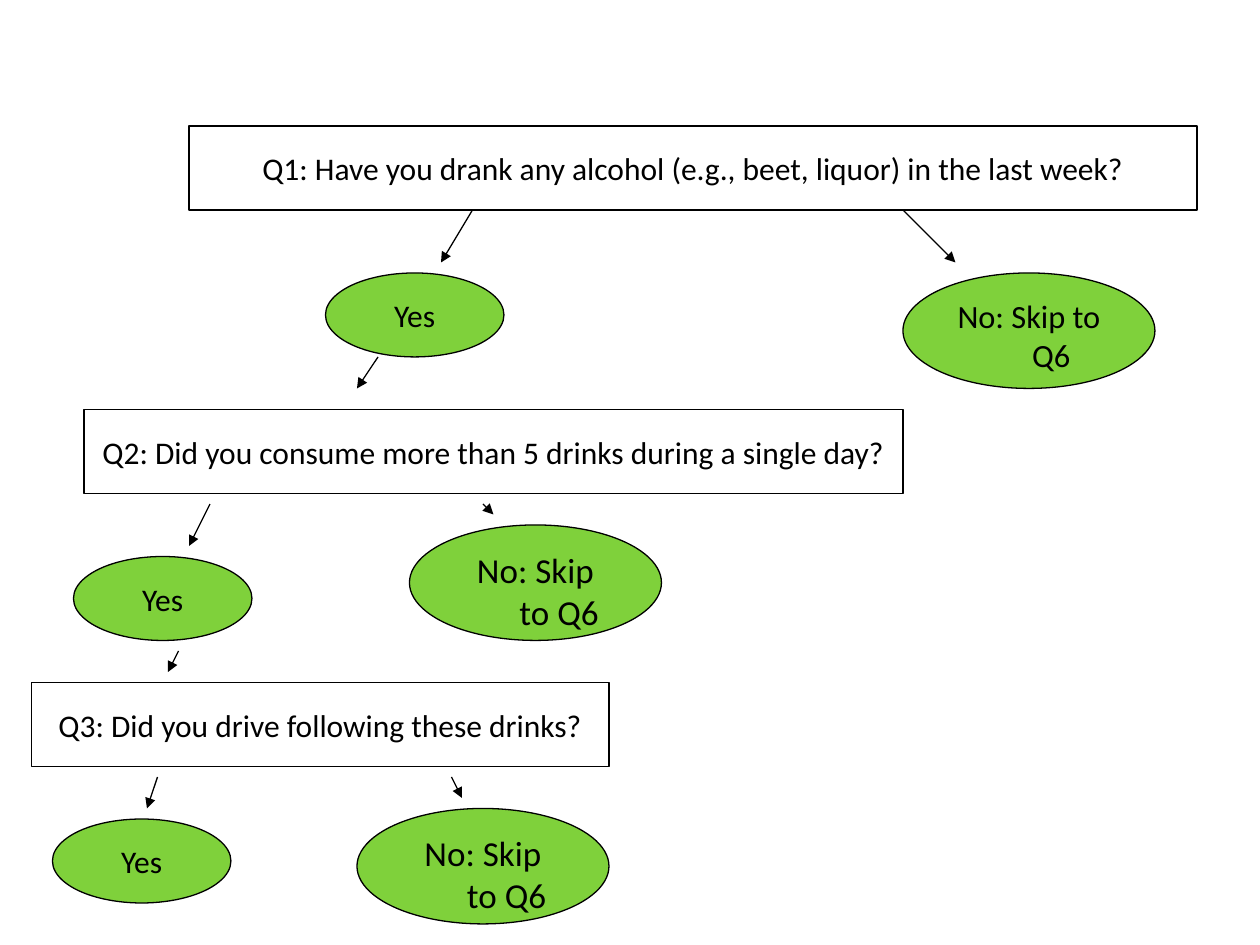
import pptx
import pptx.util
import pptx.dml.color
import pptx.enum.shapes
import pptx.enum.text
import pptx.oxml.ns
import lxml.etree

PX = 9525
COLORS = {"green": "7FD13B", "black": "000000"}
KINDS = pptx.enum.shapes.MSO_SHAPE
ANCHOR = pptx.enum.text.MSO_ANCHOR

ASKS = [
    ("Q1: Have you drank any alcohol (e.g., beet, liquor) in the last week?", 144, 96, 768),
    ("Q2: Did you consume more than 5 drinks during a single day?", 64, 312, 624),
    ("Q3: Did you drive following these drinks?", 24, 520, 440),
]
YESES = [(248, 208), (56, 424), (40, 624)]
SKIPS = [(688, 208, 18.5, 34), (312, 400, 20, 36), (272, 616, 20, 36)]
ARROWS = [
    (360, 160, 336, 200),
    (688, 160, 728, 200),
    (288, 272, 272, 296),
    (160, 384, 144, 416),
    (368, 384, 376, 392),
    (136, 496, 128, 512),
    (120, 592, 112, 616),
    (344, 592, 352, 608),
]


def color(name):
    """Return the named colour."""
    return pptx.dml.color.RGBColor.from_string(COLORS[name])


def ink(line):
    """Give a line the thin black stroke."""
    line.color.rgb = color("black")
    line.width = pptx.util.Pt(0.75)


def add_node(slide, kind, text, box, size=18):
    """Add an outlined shape with centred text."""
    node = slide.shapes.add_shape(kind, *(n * PX for n in box))
    node.shadow.inherit = False
    node.fill.background()
    ink(node.line)
    frame = node.text_frame
    frame.word_wrap = False
    frame.vertical_anchor = ANCHOR.MIDDLE
    para = frame.paragraphs[0]
    para.text = text
    para.alignment = pptx.enum.text.PP_ALIGN.CENTER
    para.font.name = "Calibri"
    para.font.size = pptx.util.Pt(size)
    para.font.color.rgb = color("black")
    return node


def add_reply(slide, text, box, size=18):
    """Add a green answer ellipse."""
    node = add_node(slide, KINDS.OVAL, text, box, size)
    node.fill.solid()
    node.fill.fore_color.rgb = color("green")
    return node


def add_skip(slide, left, top, size, indent):
    """Add a skip answer with a hanging indent."""
    node = add_reply(slide, "No: Skip to Q6", (left, top, 192, 88), size)
    frame = node.text_frame
    frame.word_wrap = True
    frame.vertical_anchor = ANCHOR.TOP
    props = frame.paragraphs[0]._p.get_or_add_pPr()
    props.set("marL", str(indent * PX))
    props.set("indent", str(-indent * PX))


def add_arrow(slide, *ends):
    """Add a straight arrow between two points."""
    kind = pptx.enum.shapes.MSO_CONNECTOR.STRAIGHT
    arrow = slide.shapes.add_connector(kind, *(n * PX for n in ends))
    ink(arrow.line)
    name = pptx.oxml.ns.qn
    tip = lxml.etree.SubElement(arrow.line._get_or_add_ln(), name("a:tailEnd"))
    tip.set("type", "triangle")
    lxml.etree.SubElement(arrow._element.spPr, name("a:effectLst"))


def main():
    """Build the question flow and save it."""
    deck = pptx.Presentation()
    deck.slide_width, deck.slide_height = 960 * PX, 720 * PX
    slide = deck.slides.add_slide(deck.slide_layouts[6])
    for text, left, top, width in ASKS:
        add_node(slide, KINDS.RECTANGLE, text, (left, top, width, 64))
    for left, top in YESES:
        add_reply(slide, "Yes", (left, top, 136, 64))
    for skip in SKIPS:
        add_skip(slide, *skip)
    for ends in ARROWS:
        add_arrow(slide, *ends)
    deck.save("out.pptx")


if __name__ == "__main__":
    main()
